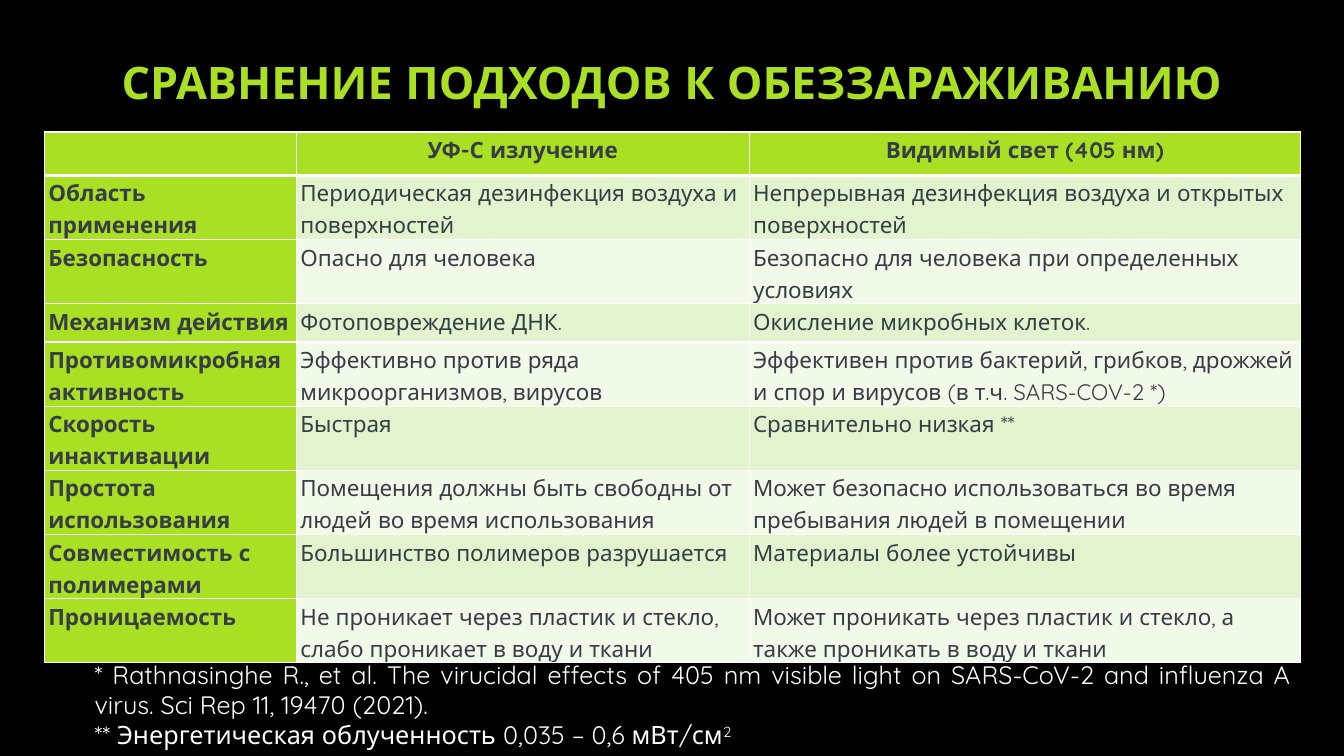
from pptx import Presentation
from pptx.dml.color import RGBColor
from pptx.enum.text import MSO_ANCHOR, PP_ALIGN
from pptx.oxml import parse_xml
from pptx.oxml.ns import nsdecls
from pptx.util import Inches, Pt

BLACK = RGBColor(0x00, 0x00, 0x00)
WHITE = RGBColor(0xFF, 0xFF, 0xFF)
LIME = RGBColor(0xA9, 0xE0, 0x23)
BAND_DARK = RGBColor(0xE2, 0xF3, 0xCD)
BAND_LIGHT = RGBColor(0xF1, 0xF9, 0xE8)
TEXT_GREY = RGBColor(0x36, 0x3D, 0x46)

COLUMN_WIDTHS = [2.5, 4.49, 5.47]
ROWS = [
    (0.43, "", "УФ-С излучение", "Видимый свет (405 нм)"),
    (0.47, "Область применения", "Периодическая дезинфекция воздуха и поверхностей",
     "Непрерывная дезинфекция воздуха и открытых поверхностей"),
    (0.33, "Безопасность", "Опасно для человека",
     "Безопасно для человека при определенных условиях"),
    (0.38, "Механизм действия", "Фотоповреждение ДНК.", "Окисление микробных клеток."),
    (0.3, "Противомикробная активность", "Эффективно против ряда микроорганизмов, вирусов",
     "Эффективен против бактерий, грибков, дрожжей и спор и вирусов (в т.ч. SARS-COV-2 *)"),
    (0.21, "Скорость инактивации", "Быстрая", "Сравнительно низкая **"),
    (0.49, "Простота использования",
     "Помещения должны быть свободны от людей во время использования",
     "Может безопасно использоваться во время пребывания людей в помещении"),
    (0.32, "Совместимость с полимерами", "Большинство полимеров разрушается",
     "Материалы более устойчивы"),
    (0.56, "Проницаемость",
     "Не проникает через пластик и стекло, слабо проникает в воду и ткани",
     "Может проникать через пластик и стекло, а также проникать в воду и ткани"),
]


def style_run(run, size, color, bold=False):
    run.font.name = "Quicksand"
    run.font.size = Pt(size)
    run.font.color.rgb = color
    run.font.bold = bold


def add_border(cell, side, width):
    cell._tc.get_or_add_tcPr().append(parse_xml(
        f'<a:ln{side} {nsdecls("a")} w="{Pt(width)}"><a:solidFill>'
        f'<a:srgbClr val="{WHITE}"/></a:solidFill></a:ln{side}>'))


presentation = Presentation()
presentation.slide_width = Inches(13.33)
presentation.slide_height = Inches(7.5)
slide = presentation.slides.add_slide(presentation.slide_layouts[6])
slide.background.fill.solid()
slide.background.fill.fore_color.rgb = BLACK

# Comparison table
table_frame = slide.shapes.add_table(
    len(ROWS), len(COLUMN_WIDTHS), Inches(0.44), Inches(1.31), Inches(12.46), Inches(5.1))
table = table_frame.table
for column, width in zip(table.columns, COLUMN_WIDTHS):
    column.width = Inches(width)
for row_index, (height, *texts) in enumerate(ROWS):
    table.rows[row_index].height = Inches(height)
    for column_index, text in enumerate(texts):
        cell = table.cell(row_index, column_index)
        is_heading = row_index == 0 or column_index == 0
        for side in "LRTB":
            thick = (row_index, side) in [(0, "B"), (1, "T")]
            add_border(cell, side, 3 if thick else 1)
        cell.fill.solid()
        if is_heading:
            cell.fill.fore_color.rgb = LIME
        else:
            cell.fill.fore_color.rgb = BAND_DARK if row_index % 2 else BAND_LIGHT
        if not text:
            continue
        cell.margin_left = cell.margin_right = Inches(0.04)
        cell.margin_top = cell.margin_bottom = 0
        paragraph = cell.text_frame.paragraphs[0]
        paragraph.text = text
        paragraph.line_spacing = 1.15
        paragraph.alignment = PP_ALIGN.LEFT if row_index else PP_ALIGN.CENTER
        style_run(paragraph.runs[0], 16, TEXT_GREY, is_heading)
table_frame.height = Inches(5.1)

# Footnotes
footnotes = slide.shapes.add_textbox(Inches(0.84), Inches(6.49), Inches(12.06), Inches(1.01))
footnotes.text_frame.word_wrap = True
footnotes.text_frame.text = (
    "* Rathnasinghe R., et al. The virucidal effects of 405 nm visible light on "
    "SARS-CoV-2 and influenza A virus. Sci Rep 11, 19470 (2021).\n"
    "** Энергетическая облученность 0,035 – 0,6 мВт/см")
exponent = footnotes.text_frame.paragraphs[1].add_run()
exponent.text = "2"
for paragraph in footnotes.text_frame.paragraphs:
    paragraph.alignment = PP_ALIGN.JUSTIFY
    for run in paragraph.runs:
        style_run(run, 18, WHITE)
exponent.font._element.set("baseline", "30000")

# Title
title = slide.shapes.add_textbox(0, Inches(0.3), Inches(13.33), Inches(1.01))
title.text_frame.word_wrap = True
title.text_frame.vertical_anchor = MSO_ANCHOR.MIDDLE
title.text_frame.text = "СРАВНЕНИЕ ПОДХОДОВ К ОБЕЗЗАРАЖИВАНИЮ"
title.text_frame.paragraphs[0].alignment = PP_ALIGN.CENTER
style_run(title.text_frame.paragraphs[0].runs[0], 32, LIME, True)

presentation.save("out.pptx")
